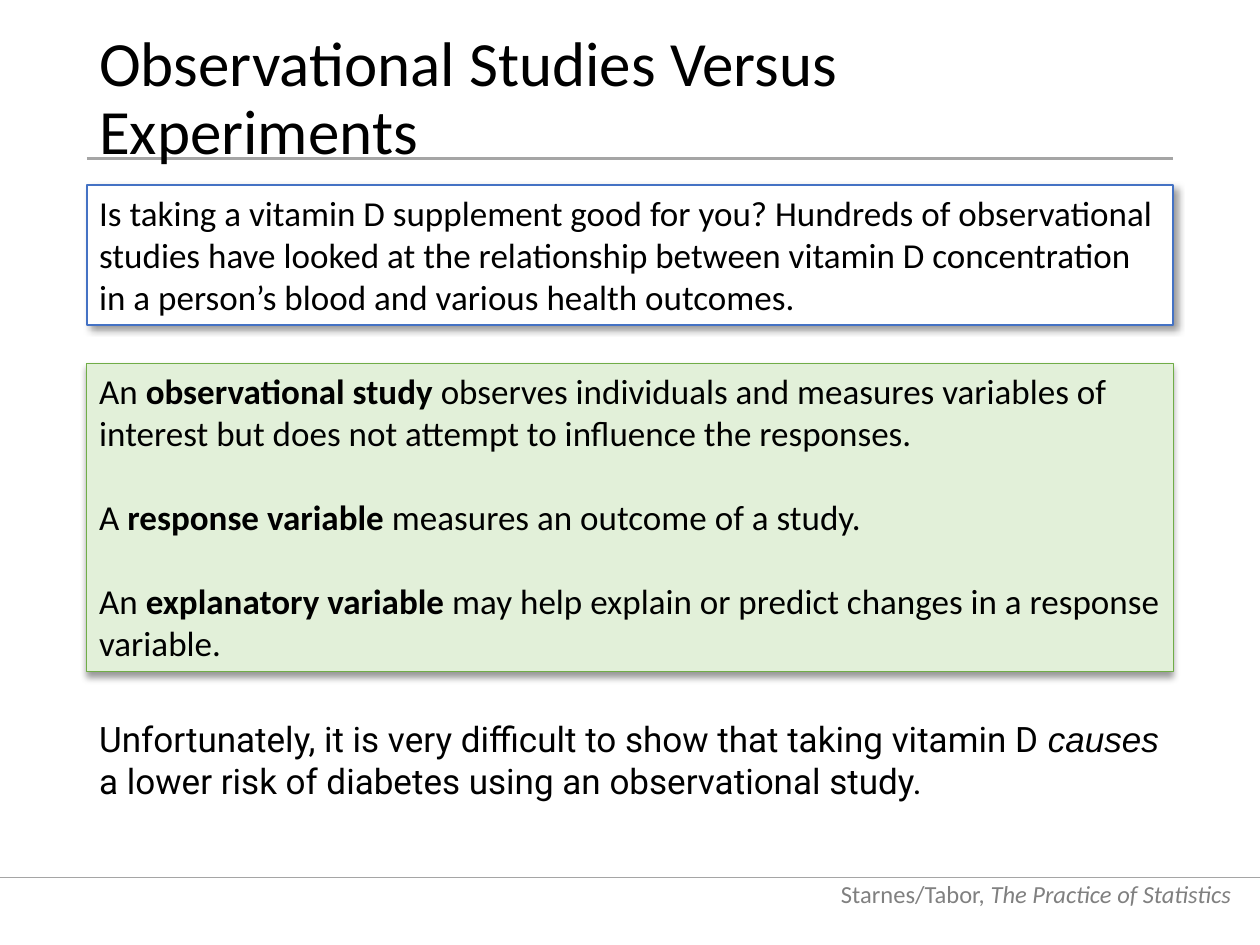
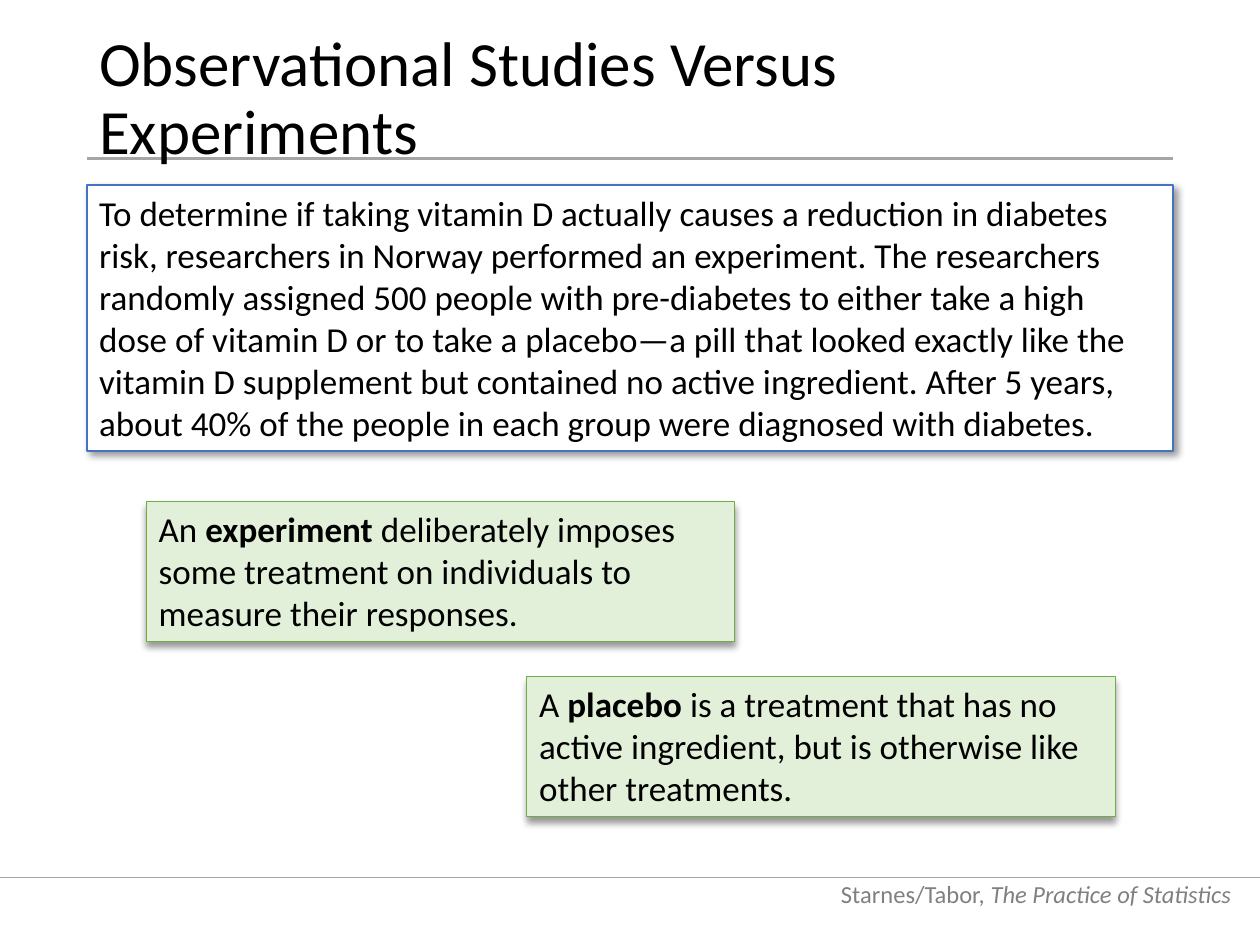
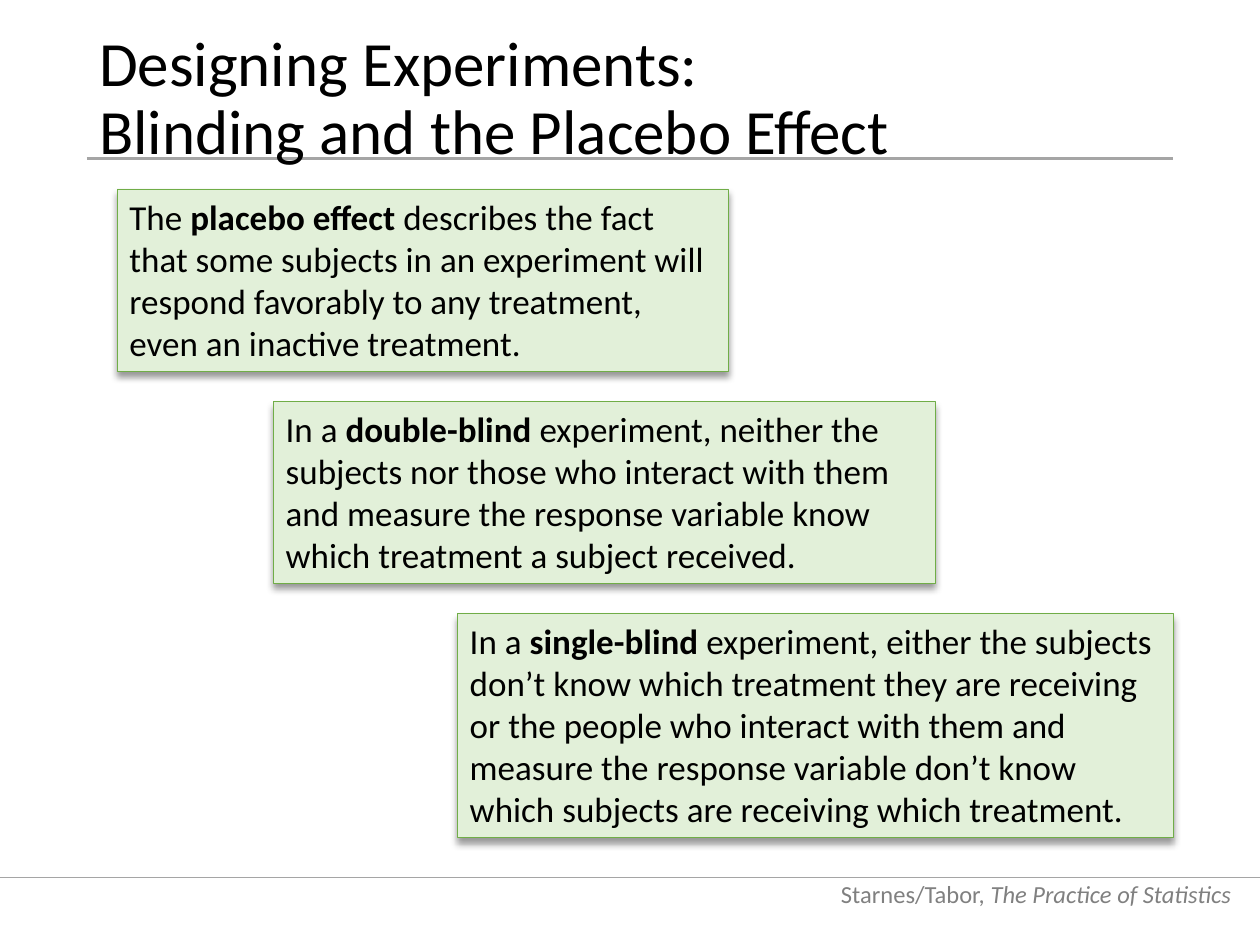
import pptx
import pptx.util
import pptx.dml.color
import pptx.enum.shapes
import pptx.enum.text
import pptx.oxml
import pptx.oxml.ns

Cm, Pt = pptx.util.Cm, pptx.util.Pt
RGBColor = pptx.dml.color.RGBColor
Anchor = pptx.enum.text.MSO_ANCHOR
Align = pptx.enum.text.PP_ALIGN
AutoSize = pptx.enum.text.MSO_AUTO_SIZE

# Colours
BLACK = RGBColor(0x00, 0x00, 0x00)
WHITE = RGBColor(0xFF, 0xFF, 0xFF)
GRAY_TEXT = RGBColor(0x80, 0x80, 0x80)
GRAY_RULE = RGBColor(0xA5, 0xA5, 0xA5)
BLUE = RGBColor(0x44, 0x72, 0xC4)
GREEN = RGBColor(0x70, 0xAD, 0x47)
PALE_GREEN = RGBColor(0xE2, 0xF0, 0xD9)

# Shared measures, in centimetres
SLIDE_WIDTH, SLIDE_HEIGHT = 25.4, 19.05
MARGIN, CONTENT_WIDTH = 1.75, 21.9
CONTEXT_TOP = 3.73
LINE_HEIGHT, BOX_PADDING = 0.85, 0.27

# Font formats
BODY = {"name": "Calibri", "size": Pt(20)}
TITLE = {"name": "Calibri", "size": Pt(36)}
FOOTER = {"name": "Calibri", "size": Pt(14)}
BOLD = {"bold": True}
ITALIC = {"italic": True}

# Box styles: fill, outline, outline width in points, shadow angle in degrees
CONTEXT_STYLE = (WHITE, BLUE, 1, 45)
DEFINITION_STYLE = (PALE_GREEN, GREEN, 0.5, 90)


def set_all(target, values):
    for name, value in values.items():
        setattr(target, name, value)


def height_for(lines):
    return lines * LINE_HEIGHT + BOX_PADDING


def place(left, top, width, height):
    return [Cm(length) for length in (left, top, width, height)]


def add_spans(para, spans, base, color=BLACK):
    """Write (text, format) pairs into a paragraph."""
    for text, extra in spans:
        span = para.add_run()
        span.text = text
        set_all(span.font, {**base, **extra})
        span.font.color.rgb = color


def define(before, term, after):
    return [(before, {}), (term, BOLD), (after, {})]


def add_text(page, frame, **settings):
    box = page.shapes.add_textbox(*place(*frame))
    set_all(box.text_frame, {"word_wrap": True, **settings})
    return box.text_frame.paragraphs[0]


def add_rule(page, left, right, top, weight):
    rule = page.shapes.add_connector(
        pptx.enum.shapes.MSO_CONNECTOR.STRAIGHT, Cm(left), Cm(top), Cm(right), Cm(top))
    rule.line.color.rgb = GRAY_RULE
    rule.line.width = Pt(weight)
    rule._element.spPr.append(pptx.oxml.parse_xml(
        f'<a:effectLst {pptx.oxml.ns.nsdecls("a")}/>'))


def add_shadow(box, angle):
    box.shadow.inherit = False
    effects = box._element.spPr.find(pptx.oxml.ns.qn("a:effectLst"))
    effects.append(pptx.oxml.parse_xml(
        f'<a:outerShdw {pptx.oxml.ns.nsdecls("a")} blurRad="{Pt(4)}" dist="{Pt(3)}" '
        f'dir="{angle * 60000}" rotWithShape="0">'
        '<a:srgbClr val="000000"><a:alpha val="40000"/></a:srgbClr></a:outerShdw>'))


def add_box(page, style, left, top, width, lines, paragraphs):
    """Draw a shadowed box whose height follows its number of text lines."""
    fill, outline, weight, angle = style
    box = page.shapes.add_shape(pptx.enum.shapes.MSO_SHAPE.RECTANGLE,
                                *place(left, top, width, height_for(lines)))
    box.fill.solid()
    box.fill.fore_color.rgb = fill
    box.line.color.rgb = outline
    box.line.width = Pt(weight)
    add_shadow(box, angle)
    text = box.text_frame
    set_all(text, {"word_wrap": True, "vertical_anchor": Anchor.TOP,
                   "auto_size": AutoSize.SHAPE_TO_FIT_TEXT})
    for index, spans in enumerate(paragraphs):
        para = text.add_paragraph() if index else text.paragraphs[0]
        para.alignment = Align.LEFT
        if index:
            para.space_before = Pt(24)
        add_spans(para, spans, BODY)


def add_context(page, lines, text):
    add_box(page, CONTEXT_STYLE, MARGIN, CONTEXT_TOP, CONTENT_WIDTH, lines, [[(text, {})]])


def add_page(deck, *title_lines):
    """Add a slide with its footer, rules and title."""
    page = deck.slides.add_slide(deck.slide_layouts[6])
    footer = add_text(page, (16.43, 17.42, 8.64, 1.02), vertical_anchor=Anchor.BOTTOM)
    footer.alignment = Align.RIGHT
    add_spans(footer, [("Starnes/Tabor,", {}), (" The Practice of Statistics", ITALIC)],
              FOOTER, GRAY_TEXT)
    add_rule(page, 0, SLIDE_WIDTH, 17.68, 0.5)
    add_rule(page, MARGIN, MARGIN + CONTENT_WIDTH, 3.2, 1.5)

    title = add_text(page, (MARGIN, 1.02, CONTENT_WIDTH, 1.98),
                     vertical_anchor=Anchor.MIDDLE, auto_size=AutoSize.NONE)
    title.line_spacing = 0.9
    for index, line in enumerate(title_lines):
        if index:
            title.add_line_break()
        add_spans(title, [(line, {})], TITLE)
    return page


def build_observational_studies(deck):
    page = add_page(deck, "Observational Studies Versus Experiments")
    add_context(page, 3, "Is taking a vitamin D supplement good for you? Hundreds of "
                "observational studies have looked at the relationship between vitamin D "
                "concentration in a person’s blood and various health outcomes.")
    add_box(page, DEFINITION_STYLE, MARGIN, 7.32, CONTENT_WIDTH, 7, [
        define("An ", "observational study ", "observes individuals and measures variables "
               "of interest but does not attempt to influence the responses."),
        define("A ", "response variable ", "measures an outcome of a study."),
        define("An ", "explanatory variable ",
               "may help explain or predict changes in a response variable."),
    ])
    remark = add_text(page, (MARGIN, 14.33, CONTENT_WIDTH, height_for(2)))
    add_spans(remark, [
        ("Unfortunately, it is very difficult to show that taking vitamin D ", {}),
        ("causes ", {"name": "Arial", **ITALIC}),
        ("a lower risk of diabetes using an observational study.", {}),
    ], {**BODY, "name": "Roboto"})


def build_experiments(deck):
    page = add_page(deck, "Observational Studies Versus Experiments")
    add_context(page, 6, "To determine if taking vitamin D actually causes a reduction in "
                "diabetes risk, researchers in Norway performed an experiment. The researchers "
                "randomly assigned 500 people with pre-diabetes to either take a high dose of "
                "vitamin D or to take a placebo—a pill that looked exactly like the vitamin D "
                "supplement but contained no active ingredient. After 5 years, about 40% of "
                "the people in each group were diagnosed with diabetes.")
    definitions = [
        (2.95, 10.11, define("An ", "experiment ", "deliberately imposes some treatment on "
                             "individuals to measure their responses.")),
        (10.62, 13.64, define("A ", "placebo", " is a treatment that has no active "
                              "ingredient, but is otherwise like other treatments.")),
    ]
    for left, top, spans in definitions:
        add_box(page, DEFINITION_STYLE, left, top, 11.86, 3, [spans])


def build_blinding(deck):
    page = add_page(deck, "Designing Experiments:", "Blinding and the Placebo Effect")
    steps = [
        (2.36, 12.32, 4, define(
            "The ", "placebo effect ", "describes the fact that some subjects in an experiment "
            "will respond favorably to any treatment, even an inactive treatment.")),
        (5.51, 13.34, 4, define(
            "In a ", "double-blind", " experiment, neither the subjects nor those who interact "
            "with them and measure the response variable know which treatment a subject "
            "received.")),
        (9.22, 14.43, 5, define(
            "In a ", "single-blind", " experiment, either the subjects don’t know which "
            "treatment they are receiving or the people who interact with them and measure the "
            "response variable don’t know which subjects are receiving which treatment.")),
    ]
    top, gap = 3.81, 0.61
    for left, width, lines, spans in steps:
        add_box(page, DEFINITION_STYLE, left, top, width, lines, [spans])
        top += height_for(lines) + gap


def main():
    deck = pptx.Presentation()
    set_all(deck, {"slide_width": Cm(SLIDE_WIDTH), "slide_height": Cm(SLIDE_HEIGHT)})
    build_observational_studies(deck)
    build_experiments(deck)
    build_blinding(deck)
    deck.save("out.pptx")


if __name__ == "__main__":
    main()
